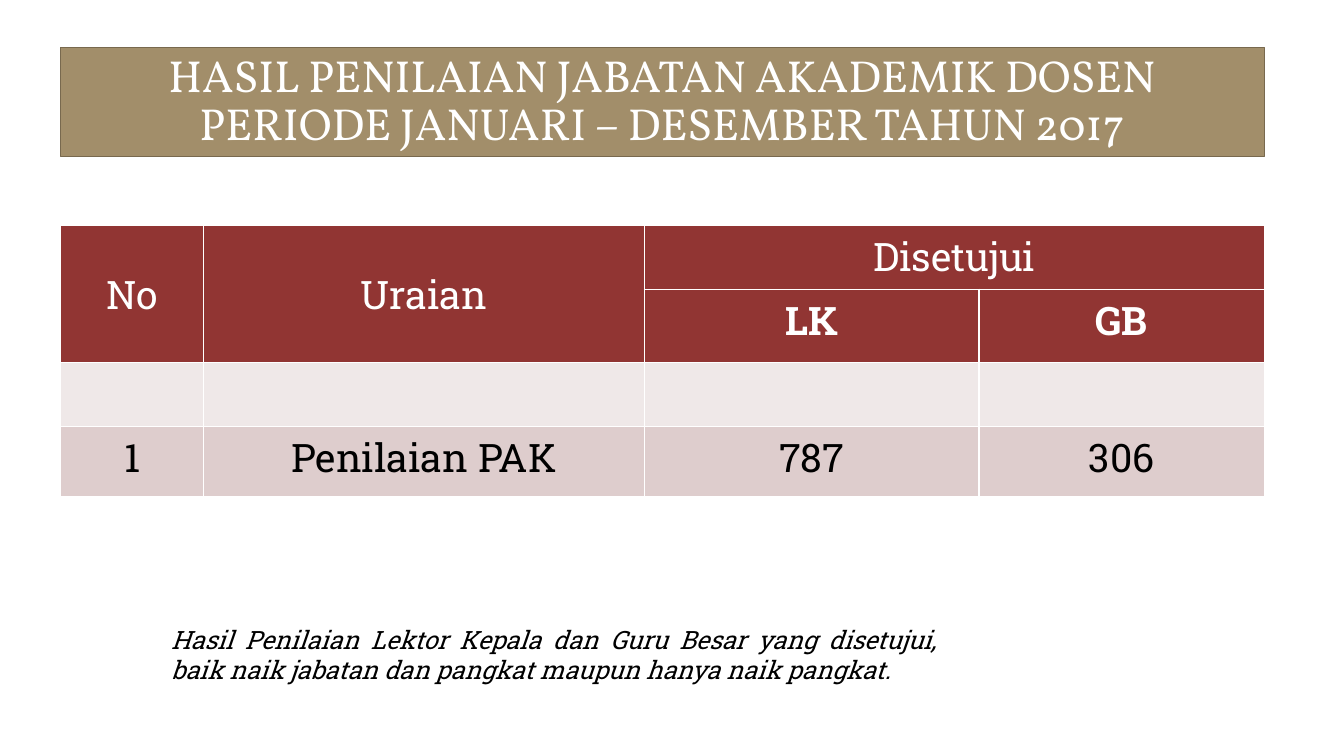
from lxml.etree import SubElement
from pptx import Presentation
from pptx.dml.color import RGBColor
from pptx.enum.shapes import MSO_SHAPE
from pptx.enum.text import MSO_ANCHOR, PP_ALIGN
from pptx.oxml.ns import qn
from pptx.util import Inches, Pt

COLORS = {
    "white": "FFFFFF", "black": "000000", "sand": "A28E6A", "sand_edge": "78694E",
    "header": "913533", "light_row": "EFE8E8", "dark_row": "DECDCD",
}


def color(name):
    return RGBColor.from_string(COLORS[name])


def write(frame, text, size=28, font="Roboto Slab", ink="black", bold=False,
          italic=False, align=PP_ALIGN.CENTER, spacing=1.0):
    """Fill the first paragraph; each newline becomes a line break."""
    frame.word_wrap = True
    para = frame.paragraphs[0]
    para.alignment = align
    para.line_spacing = spacing
    for index, line in enumerate(text.split("\n")):
        if index:
            para.add_line_break()
        span = para.add_run()
        span.text = line
        span.font.size = Pt(size)
        span.font.name = font
        span.font.bold = bold
        span.font.italic = italic
        span.font.color.rgb = color(ink)


deck = Presentation()
deck.slide_width, deck.slide_height = Inches(13.33), Inches(7.5)
page = deck.slides.add_slide(deck.slide_layouts[6])

# Title banner
banner = page.shapes.add_shape(
    MSO_SHAPE.RECTANGLE, Inches(0.6), Inches(0.47), Inches(11.94), Inches(1.08))
banner.shadow.inherit = False
banner.fill.solid()
banner.fill.fore_color.rgb = color("sand")
banner.line.color.rgb = color("sand_edge")
banner.line.width = Pt(1)
banner.text_frame.vertical_anchor = MSO_ANCHOR.MIDDLE
write(banner.text_frame,
      "HASIL PENILAIAN JABATAN AKADEMIK DOSEN\nPERIODE JANUARI – DESEMBER TAHUN 2017",
      size=32, font="Vollkorn", ink="white", spacing=0.9)

# Results table
column_widths = [1.42, 4.37, 3.32, 2.83]
rows = [
    (0.63, "header", ["No", "Uraian", "Disetujui", ""]),
    (0.73, "header", ["", "", "LK", "GB"]),
    (0.63, "light_row", ["", "", "", ""]),
    (0.70, "dark_row", ["1", "Penilaian PAK", "787", "306"]),
]
table = page.shapes.add_table(
    len(rows), len(column_widths),
    Inches(0.6), Inches(2.24), Inches(11.94), Inches(2.69)).table
for column, width in zip(table.columns, column_widths):
    column.width = Inches(width)

for row_index, (height, fill, texts) in enumerate(rows):
    table.rows[row_index].height = Inches(height)
    for column_index, text in enumerate(texts):
        cell = table.cell(row_index, column_index)
        properties = cell._tc.get_or_add_tcPr()
        for side in ("a:lnL", "a:lnR", "a:lnT", "a:lnB"):
            border = SubElement(properties, qn(side), w=str(Pt(1)))
            paint = SubElement(border, qn("a:solidFill"))
            SubElement(paint, qn("a:srgbClr"), val=COLORS["white"])
        cell.fill.solid()
        cell.fill.fore_color.rgb = color(fill)
        if text:
            write(cell.text_frame, text, bold=row_index == 1,
                  ink="white" if fill == "header" else "black")

for column_index in (0, 1):
    heading = table.cell(0, column_index)
    heading.merge(table.cell(1, column_index))
    heading.vertical_anchor = MSO_ANCHOR.MIDDLE
table.cell(0, 2).merge(table.cell(0, 3))

# Footnote
note = page.shapes.add_textbox(Inches(1.6), Inches(6.14), Inches(7.79), Inches(0.71))
write(note.text_frame,
      "Hasil Penilaian Lektor Kepala dan Guru Besar yang disetujui, "
      "baik naik jabatan dan pangkat maupun hanya naik pangkat.",
      size=18, italic=True, align=PP_ALIGN.JUSTIFY)

deck.save("out.pptx")
